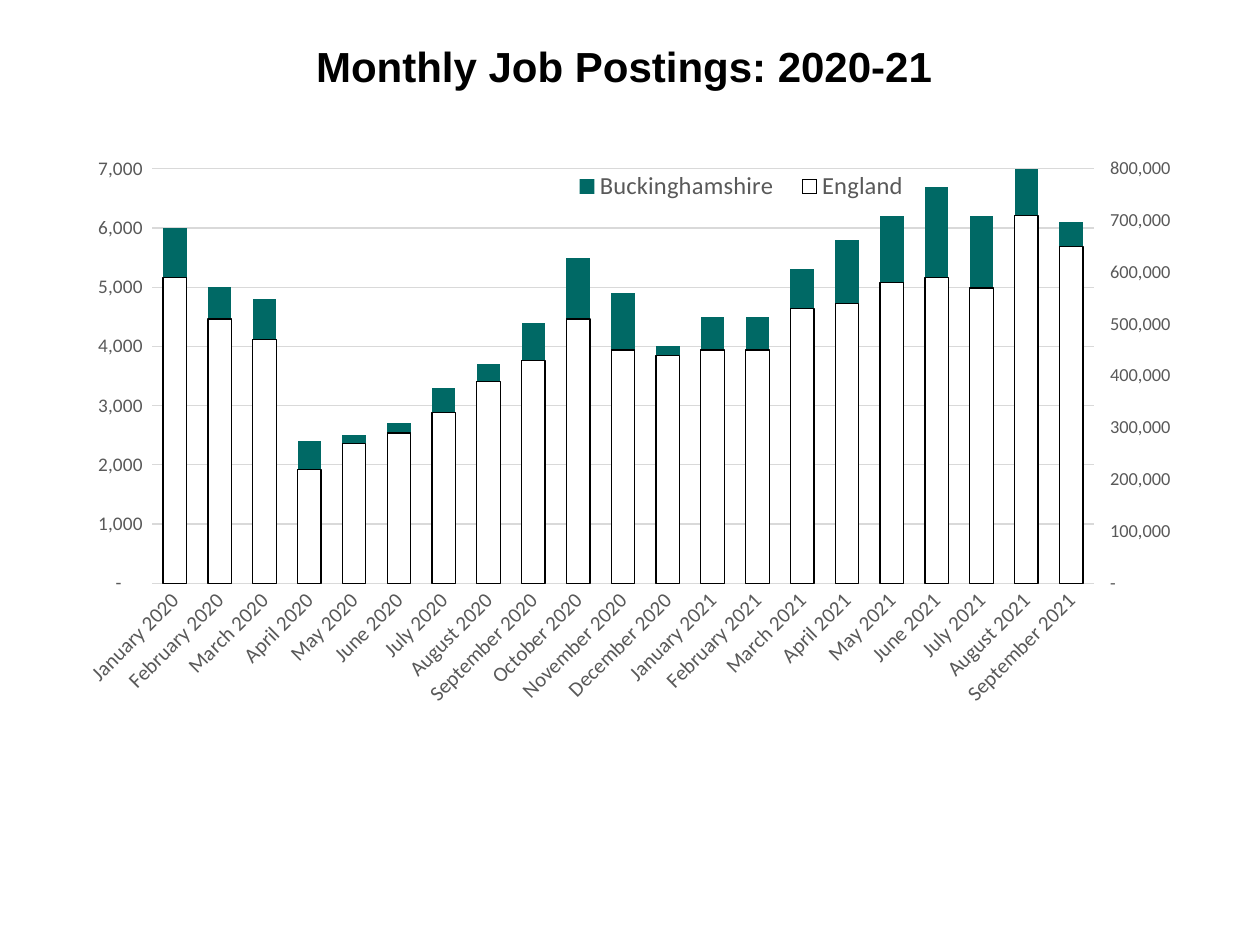
from copy import deepcopy

from pptx import Presentation
from pptx import util as u
from pptx.chart import axis as ax
from pptx.chart import data as cd
from pptx.dml.color import RGBColor
from pptx.enum import chart as ch, text as tx
from pptx.oxml import ns, parse_xml

INK = {"black": "000000", "grey": "595959", "rule": "D9D9D9",
       "teal": "006965", "white": "FFFFFF"}
YEARS = {2020: 12, 2021: 9}
MONTHS = ("January February March April May June July August September "
          "October November December").split()
BUCKS = [6000, 5000, 4800, 2400, 2500, 2700, 3300, 3700, 4400, 5500, 4900,
         4000, 4500, 4500, 5300, 5800, 6200, 6700, 6200, 7500, 6100]
ENGLAND = [590, 510, 470, 220, 270, 290, 330, 390, 430, 510, 450,
           440, 450, 450, 530, 540, 580, 590, 570, 710, 650]
COUNT = '_-* #,##0_-;\\-* #,##0_-;_-* "-"??_-;_-@_'


def hue(name):
    return RGBColor.from_string(INK[name])


def style(font, size, color="grey", face="Calibri", bold=False):
    font.size, font.name, font.bold = u.Pt(size), face, bold
    font.color.rgb = hue(color)


def write(frame, words, align=tx.PP_ALIGN.CENTER, **look):
    frame.word_wrap = True
    frame.vertical_anchor = tx.MSO_ANCHOR.MIDDLE
    para = frame.paragraphs[0]
    para.alignment = align
    run = para.add_run()
    run.text = words
    style(run.font, **look)


def edge(line, color):
    line.color.rgb = hue(color)
    line.width = u.Pt(0.75)


def lay_out(node, index, box, size, inner=False):
    """Fix a plot area or legend at a box inside a chart of the given size."""
    for old in node.findall(ns.qn("c:layout")):
        node.remove(old)
    target = '<c:layoutTarget val="inner"/>' if inner else ""
    shares = [u.Inches(n) / whole for n, whole in zip(box, size * 2)]
    parts = "".join(f'<c:{k} val="{v}"/>' for k, v in zip(
        ("xMode", "yMode", "x", "y", "w", "h"), ["edge", "edge"] + shares))
    node.insert(index, parse_xml(
        f'<c:layout {ns.nsdecls("c")}><c:manualLayout>{target}{parts}'
        "</c:manualLayout></c:layout>"))


def scale(axis, top, step, size, tick):
    axis.minimum_scale, axis.maximum_scale = 0, top
    axis.major_unit = step
    axis.major_tick_mark = tick
    axis.format.line.fill.background()
    labels = axis.tick_labels
    labels.number_format, labels.number_format_is_linked = COUNT, False
    style(labels.font, size)


def split_right(chart):
    """Move the second series to a bar plot of its own on a right axis."""
    area = chart.plots[0]._element.getparent()
    left = area.find(ns.qn("c:barChart"))
    right = deepcopy(left)
    left.remove(left.findall(ns.qn("c:ser"))[1])
    right.remove(right.find(ns.qn("c:ser")))
    left.addnext(right)
    cat = deepcopy(area.find(ns.qn("c:catAx")))
    val = deepcopy(area.find(ns.qn("c:valAx")))
    area.find(ns.qn("c:valAx")).addnext(val)
    val.addnext(cat)
    for node, (own, cross) in ((cat, ("3001", "3002")), (val, ("3002", "3001"))):
        node.find(ns.qn("c:axId")).set("val", own)
        node.find(ns.qn("c:crossAx")).set("val", cross)
    for node, key in zip(right.findall(ns.qn("c:axId")), ("3001", "3002")):
        node.set("val", key)
    val.find(ns.qn("c:axPos")).set("val", "r")
    val.find(ns.qn("c:crosses")).set("val", "max")
    ax.CategoryAxis(cat).visible = False
    axis = ax.ValueAxis(val)
    axis.has_major_gridlines = False
    scale(axis, 800000, 100000, 10.5, ch.XL_TICK_MARK.OUTSIDE)


def add_title(slide, x, y, w, h):
    title = slide.shapes.title
    title.left, title.top, title.width, title.height = x, y, w, h
    write(title.text_frame, "Monthly Job Postings: 2020-21 ", size=24,
          color="black", face="Arial", bold=True)


def add_postings(slide, x, y, w, h):
    data = cd.CategoryChartData()
    data.categories = [f"{month} {year}" for year, count in YEARS.items()
                       for month in MONTHS[:count]]
    data.add_series("Buckinghamshire", BUCKS)
    data.add_series("England", [1000 * n for n in ENGLAND])
    chart = slide.shapes.add_chart(
        ch.XL_CHART_TYPE.COLUMN_CLUSTERED, x, y, w, h, data).chart
    chart.has_title = False
    style(chart.font, 10, "black")

    plot = chart.plots[0]
    plot.gap_width, plot.vary_by_categories = 91, False
    for series, color in zip(plot.series, ("teal", "white")):
        series.format.fill.solid()
        series.format.fill.fore_color.rgb = hue(color)
    edge(plot.series[1].format.line, "black")

    months = chart.category_axis
    months.major_tick_mark = ch.XL_TICK_MARK.NONE
    edge(months.format.line, "rule")
    style(months.tick_labels.font, 12)
    months._element.find(f".//{ns.qn('a:bodyPr')}").set("rot", "-2700000")

    count = chart.value_axis
    scale(count, 7000, 1000, 11, ch.XL_TICK_MARK.NONE)
    edge(count.major_gridlines.format.line, "rule")

    chart.has_legend = True
    legend = chart.legend
    legend.position = ch.XL_LEGEND_POSITION.BOTTOM
    legend.include_in_layout = False
    style(legend.font, 14)
    lay_out(legend._element, 1, (3.94, 0.19, 2.89, 0.3), (w, h))

    split_right(chart)
    lay_out(plot._element.getparent(), 0, (0.71, 0.2, 7.47, 3.29), (w, h),
            inner=True)


def main():
    deck = Presentation()
    deck.slide_width, deck.slide_height = u.Inches(10), u.Inches(7.5)
    slide = deck.slides.add_slide(deck.slide_layouts[5])
    add_title(slide, *map(u.Inches, (0.5, -0.1, 9, 1.25)))
    add_postings(slide, *map(u.Inches, (0.5, 1.14, 9, 4.95)))
    deck.save("out.pptx")


if __name__ == "__main__":
    main()
